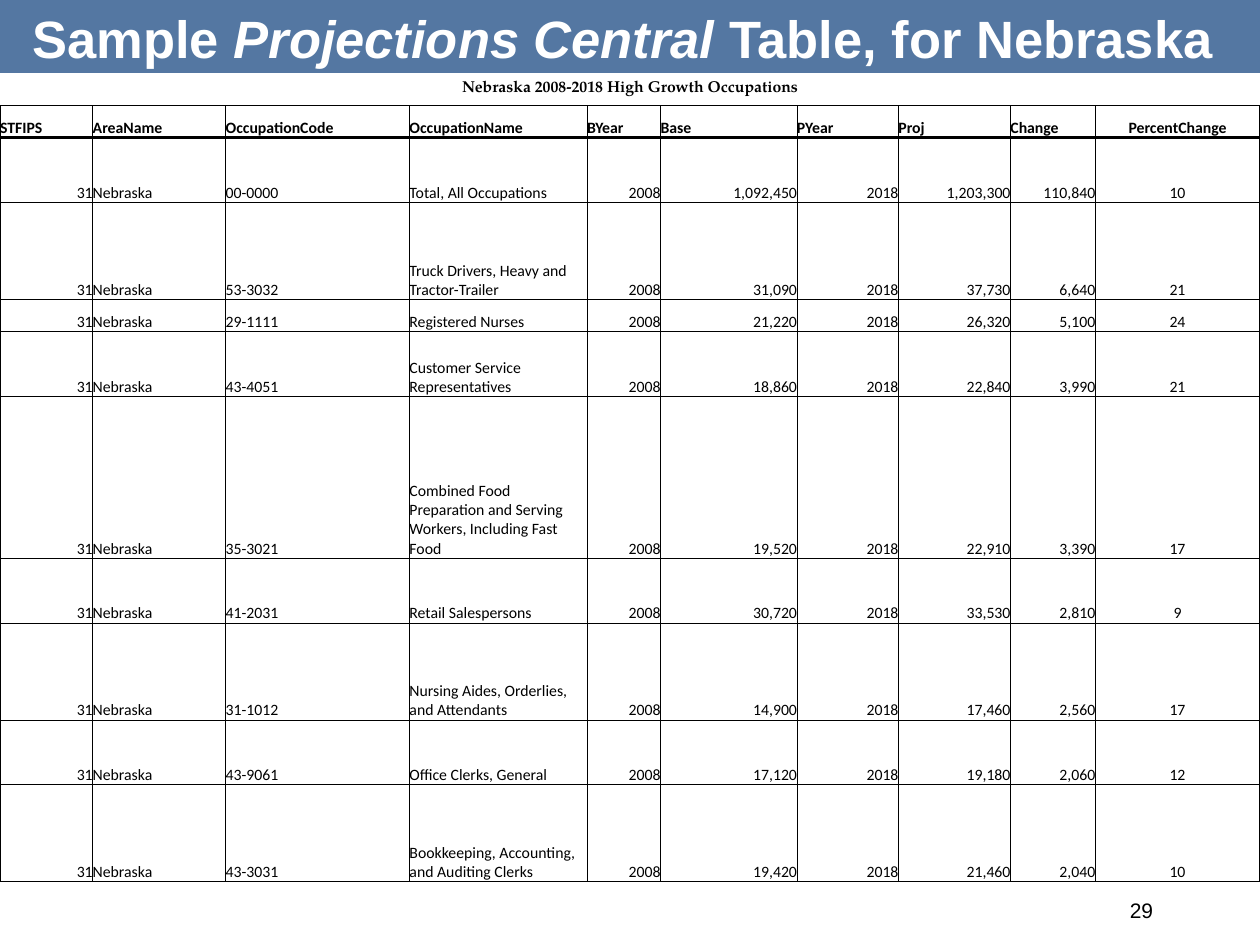
from lxml.etree import SubElement
from pptx import Presentation
from pptx.dml.color import RGBColor
from pptx.enum.shapes import MSO_SHAPE
from pptx.enum.text import MSO_ANCHOR as Anchor, PP_ALIGN as Align
from pptx.oxml.ns import qn
from pptx.util import Pt

TITLE = [("Sample ", False), ("Projections Central ", True), ("Table, for Nebraska ", False)]
CAPTION = "Nebraska 2008-2018 High Growth Occupations"
PAGE_NUMBER = "29"

COLUMNS = [
    ("STFIPS", 53, Align.RIGHT),
    ("AreaName", 76, Align.LEFT),
    ("OccupationCode", 105, Align.LEFT),
    ("OccupationName", 101.5, Align.LEFT),
    ("BYear", 42, Align.RIGHT),
    ("Base", 78, Align.RIGHT),
    ("PYear", 58, Align.RIGHT),
    ("Proj", 64, Align.RIGHT),
    ("Change", 48.5, Align.RIGHT),
    ("PercentChange", 94, Align.CENTER),
]
OCCUPATIONS = [
    ("00-0000", "Total, All Occupations", "1,092,450", "1,203,300", "110,840", "10", 2),
    ("53-3032", "Truck Drivers, Heavy and Tractor-Trailer", "31,090", "37,730", "6,640", "21", 3),
    ("29-1111", "Registered Nurses", "21,220", "26,320", "5,100", "24", 1),
    ("43-4051", "Customer Service Representatives", "18,860", "22,840", "3,990", "21", 2),
    ("35-3021", "Combined Food Preparation and Serving Workers, Including Fast Food",
     "19,520", "22,910", "3,390", "17", 5),
    ("41-2031", "Retail Salespersons", "30,720", "33,530", "2,810", "9", 2),
    ("31-1012", "Nursing Aides, Orderlies, and Attendants", "14,900", "17,460", "2,560", "17", 3),
    ("43-9061", "Office Clerks, General", "17,120", "19,180", "2,060", "12", 2),
    ("43-3031", "Bookkeeping, Accounting, and Auditing Clerks", "19,420", "21,460", "2,040", "10", 3),
]

THEME = {
    "band": "376092", "band_alpha": 85, "white": "FFFFFF", "black": "000000",
    "sans": "Arial", "body": "Calibri", "serif": "TeX Gyre Pagella",
    "title_size": 30, "table_size": 9, "number_size": 12,
    "thin": 0.5, "thick": 2,
}
PAGE_WIDTH, PAGE_HEIGHT = 720, 540
TABLE_TOP, ROW_UNIT = 41.76, 18.49


def color(name):
    return RGBColor.from_string(THEME[name])


def style(para, face, size, ink, align, bold=False):
    para.alignment = align
    para.font.name = THEME[face]
    para.font.size = Pt(THEME[size])
    para.font.color.rgb = color(ink)
    para.font.bold = bold


def add_band(page):
    band = page.shapes.add_shape(MSO_SHAPE.RECTANGLE, Pt(-0.5), Pt(0), Pt(PAGE_WIDTH + 0.5), Pt(86.4))
    band.shadow.inherit = False
    band.line.fill.background()
    band.fill.solid()
    band.fill.fore_color.rgb = color("band")
    tint = band.fill._xPr.find(".//" + qn("a:srgbClr"))
    SubElement(tint, qn("a:alpha"), val=str(THEME["band_alpha"] * 1000))


def add_text(page, place, spans, anchor, **look):
    box = page.shapes.add_textbox(*map(Pt, place))
    box.text_frame.word_wrap = True
    box.text_frame.vertical_anchor = anchor
    para = box.text_frame.paragraphs[0]
    for text, italic in spans:
        span = para.add_run()
        span.text = text
        if italic:
            span.font.italic = True
    style(para, **look)


def set_borders(cell, **widths):
    properties = cell._tc.get_or_add_tcPr()
    for side in "LRTB":
        width = widths.get(side, 0)
        line = SubElement(properties, qn("a:ln" + side), w=str(Pt(width)))
        if width:
            fill = SubElement(line, qn("a:solidFill"))
            SubElement(fill, qn("a:srgbClr"), val=THEME["black"])
        else:
            SubElement(line, qn("a:noFill"))


def fill_cell(cell, text, anchor, borders, **look):
    set_borders(cell, **borders)
    cell.fill.solid()
    cell.fill.fore_color.rgb = color("white")
    cell.margin_left = cell.margin_right = cell.margin_top = cell.margin_bottom = 0
    cell.vertical_anchor = anchor
    cell.text = text
    style(cell.text_frame.paragraphs[0], size="table_size", ink="black", **look)


def add_table(page):
    units = [1, 1] + [entry[-1] for entry in OCCUPATIONS]
    frame = page.shapes.add_table(len(units), len(COLUMNS), Pt(0), Pt(TABLE_TOP),
                                  Pt(PAGE_WIDTH), Pt(ROW_UNIT * sum(units)))
    table = frame.table
    table.first_row = table.horz_banding = False
    for row, unit in zip(table.rows, units):
        row.height = Pt(ROW_UNIT * unit)
    for column, (_, width, _) in zip(table.columns, COLUMNS):
        column.width = Pt(width)

    thin, thick = THEME["thin"], THEME["thick"]
    for index in range(len(COLUMNS)):
        fill_cell(table.cell(0, index), CAPTION if index == 0 else "", Anchor.MIDDLE,
                  {"B": thin}, face="serif", align=Align.CENTER, bold=True)
    table.cell(0, 0).merge(table.cell(0, len(COLUMNS) - 1))

    records = [[heading for heading, _, _ in COLUMNS]]
    for code, name, base, projected, change, percent, _ in OCCUPATIONS:
        records.append(["31", "Nebraska", code, name, "2008", base, "2018", projected, change, percent])
    for number, record in enumerate(records):
        heading = number == 0
        borders = {"L": thin, "R": thin, "T": thick if number == 1 else thin,
                   "B": thick if heading else thin}
        for index, (text, (_, _, align)) in enumerate(zip(record, COLUMNS)):
            if heading and align == Align.RIGHT:
                align = Align.LEFT
            fill_cell(table.cell(number + 1, index), text, Anchor.BOTTOM, borders,
                      face="body", align=align, bold=heading)


def main():
    deck = Presentation()
    deck.slide_width, deck.slide_height = Pt(PAGE_WIDTH), Pt(PAGE_HEIGHT)
    page = deck.slides.add_slide(deck.slide_layouts[6])
    add_band(page)
    add_text(page, (498, 505.5, 168, 28.8), [(PAGE_NUMBER, False)], Anchor.MIDDLE,
             face="sans", size="number_size", ink="black", align=Align.RIGHT)
    add_table(page)
    add_text(page, (0, 0, PAGE_WIDTH, 44), TITLE, Anchor.TOP,
             face="sans", size="title_size", ink="white", align=Align.CENTER, bold=True)
    deck.save("out.pptx")


if __name__ == "__main__":
    main()
